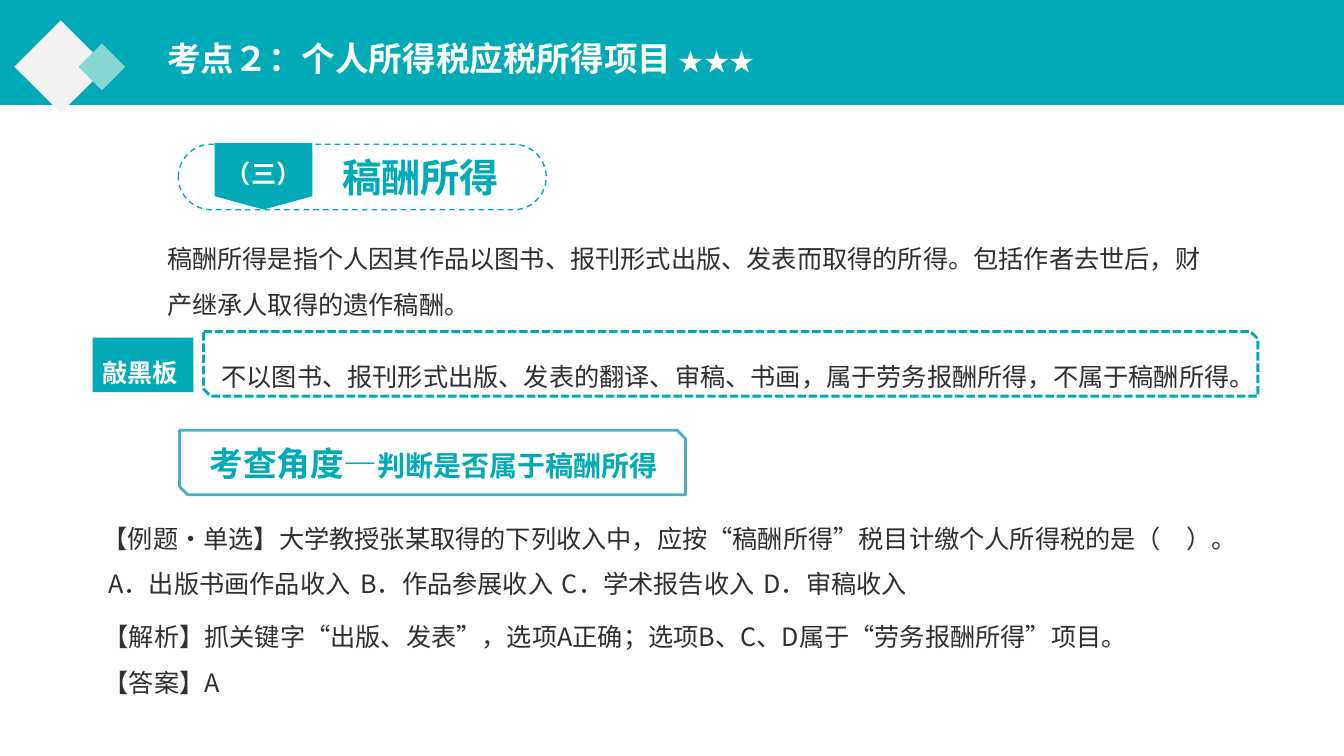
from lxml.etree import SubElement
from pptx import Presentation
from pptx.dml.color import RGBColor
from pptx.enum.dml import MSO_LINE
from pptx.enum.shapes import MSO_SHAPE
from pptx.enum.text import MSO_ANCHOR, MSO_AUTO_SIZE, PP_ALIGN
from pptx.oxml.ns import qn
from pptx.util import Pt

COLORS = {
    "teal": "00AAB7", "mint": "86D7D4", "pale": "F2F2F2",
    "blue": "4BACC6", "ink": "2F2F2F", "white": "FFFFFF",
}
SANS, SERIF = "Noto Sans CJK SC", "Times New Roman"


def add_shape(kind, box, fill=None, line=None, width=1, dash=None):
    sp = s.shapes.add_shape(kind, *[Pt(v) for v in box])
    sp.shadow.inherit = False
    if fill:
        sp.fill.solid()
        sp.fill.fore_color.rgb = RGBColor.from_string(COLORS[fill])
    else:
        sp.fill.background()
    if line:
        sp.line.color.rgb = RGBColor.from_string(COLORS[line])
        sp.line.width = Pt(width)
        sp.line.dash_style = dash
    else:
        sp.line.fill.background()
    return sp


def write(sp, paragraphs, color, bold=False, spacing=1.0, wrap=True):
    """Each paragraph is a list of (text, size, font) runs."""
    tf = sp.text_frame
    tf.word_wrap = wrap
    tf.auto_size = MSO_AUTO_SIZE.NONE
    tf.vertical_anchor = MSO_ANCHOR.TOP
    for i, runs in enumerate(paragraphs):
        p = tf.add_paragraph() if i else tf.paragraphs[0]
        p.alignment = PP_ALIGN.LEFT
        p.line_spacing = spacing
        p.space_before = Pt(0)
        for text, size, font in runs:
            r = p.add_run()
            r.text = text
            r.font.size, r.font.bold, r.font.name = Pt(size), bold, font
            r.font.color.rgb = RGBColor.from_string(COLORS[color])
            SubElement(r.font._element, qn("a:ea"), typeface=font)


prs = Presentation()
prs.slide_width, prs.slide_height = Pt(960), Pt(540)
s = prs.slides.add_slide(prs.slide_layouts[1])
title, question = s.placeholders

# Header band with two diamonds
add_shape(MSO_SHAPE.RECTANGLE, (0, 0, 960, 75), "teal")
for left, top, side, fill in [(20, 24.3, 46.8, "pale"), (61, 36, 23.6, "mint")]:
    add_shape(MSO_SHAPE.RECTANGLE, (left, top, side, side), fill).rotation = 45

# Title, brought in front of the band
s.shapes.element.append(title.element)
title.left, title.top, title.width, title.height = Pt(112.3), Pt(23.8), Pt(448.6), Pt(36)
write(title, [[("考点２：个人所得税应税所得项目 ", 24, SANS), ("★★★", 18, SERIF)]],
      "white", bold=True)

# Section heading
pill = add_shape(MSO_SHAPE.ROUNDED_RECTANGLE, (127.4, 103, 262.8, 46.8),
                 line="teal", dash=MSO_LINE.DASH)
pill.adjustments[0] = 0.5
flag = add_shape(MSO_SHAPE.FLOWCHART_OFFPAGE_CONNECTOR, (153.4, 102.2, 69.8, 47.5), "teal")
write(flag, [[("（三）", 18, SANS)]], "white", bold=True)
flag.text_frame.vertical_anchor = MSO_ANCHOR.MIDDLE
flag.text_frame.margin_top = Pt(8.6)
flag.text_frame.paragraphs[0].alignment = PP_ALIGN.CENTER

# Text boxes: box, runs, colour, bold, line spacing, wrap
text_boxes = [
    ((237.6, 105.8, 127.4, 41), [[("稿酬所得", 28, SANS)]], "teal", True, 1.0, False),
    ((112.3, 159.8, 764.6, 69.8),
     [[("稿酬所得是指个人因其作品以图书、报刊形式出版、发表而取得的所得。"
        "包括作者去世后，财产继承人取得的遗作稿酬。", 18, SANS)]],
     "ink", False, 1.5, True),
    ((151.2, 243.4, 747.4, 38.9),
     [[("不以图书、报刊形式出版、发表的翻译、审稿、书画，"
        "属于劳务报酬所得，不属于稿酬所得。", 18, SANS)]],
     "ink", False, 1.5, True),
    ((142.6, 307.4, 350, 41),
     [[("考查角度—", 24, SANS), ("判断是否属于稿酬所得", 20, SANS)]],
     "teal", True, 1.2, True),
    ((67, 429.8, 827.3, 69.8),
     [[("【解析】抓关键字“出版、发表”，选项A正确；选项B、C、D属于“劳务报酬所得”项目。",
        18, SANS)],
      [("【答案】A", 18, SANS)]],
     "ink", False, 1.5, True),
]
for box, *content in text_boxes:
    write(s.shapes.add_textbox(*[Pt(v) for v in box]), *content)

# Reminder label and snipped frames
label = add_shape(MSO_SHAPE.RECTANGLE, (66.2, 241.2, 72, 38.9), "teal")
write(label, [[("敲黑板", 18, SANS)]], "white", bold=True, spacing=1.5)
for box, line, dash, snip in [
    ((145.4, 236.9, 753.1, 46.1), "teal", MSO_LINE.SQUARE_DOT, 0.112),
    ((128.2, 307.4, 361.4, 46.1), "blue", None, 0.129),
]:
    frame = add_shape(MSO_SHAPE.SNIP_2_DIAG_RECTANGLE, box, line=line, width=2, dash=dash)
    frame.adjustments[0], frame.adjustments[1] = 0, snip

# Question, with the options on tab stops
question.left, question.top, question.width, question.height = Pt(66.2), Pt(359.3), Pt(853.2), Pt(72.7)
write(question, [
    [("【例题·单选】大学教授张某取得的下列收入中，应按“稿酬所得”税目计缴个人所得税的是（　）。",
      18, SANS)],
    [("A．出版书画作品收入\tB．作品参展收入\tC．学术报告收入\tD．审稿收入", 18, SANS)],
], "ink", spacing=1.5)
for p, indent in zip(question.text_frame.paragraphs, (0, 4)):
    pPr = p._p.get_or_add_pPr()
    pPr.set("marL", str(Pt(indent)))
    pPr.set("indent", "0")
    SubElement(pPr, qn("a:buNone"))
tabs = SubElement(pPr, qn("a:tabLst"))
for stop in (216, 456, 648):
    SubElement(tabs, qn("a:tab"), pos=str(Pt(stop)), algn="l")

prs.save("out.pptx")
